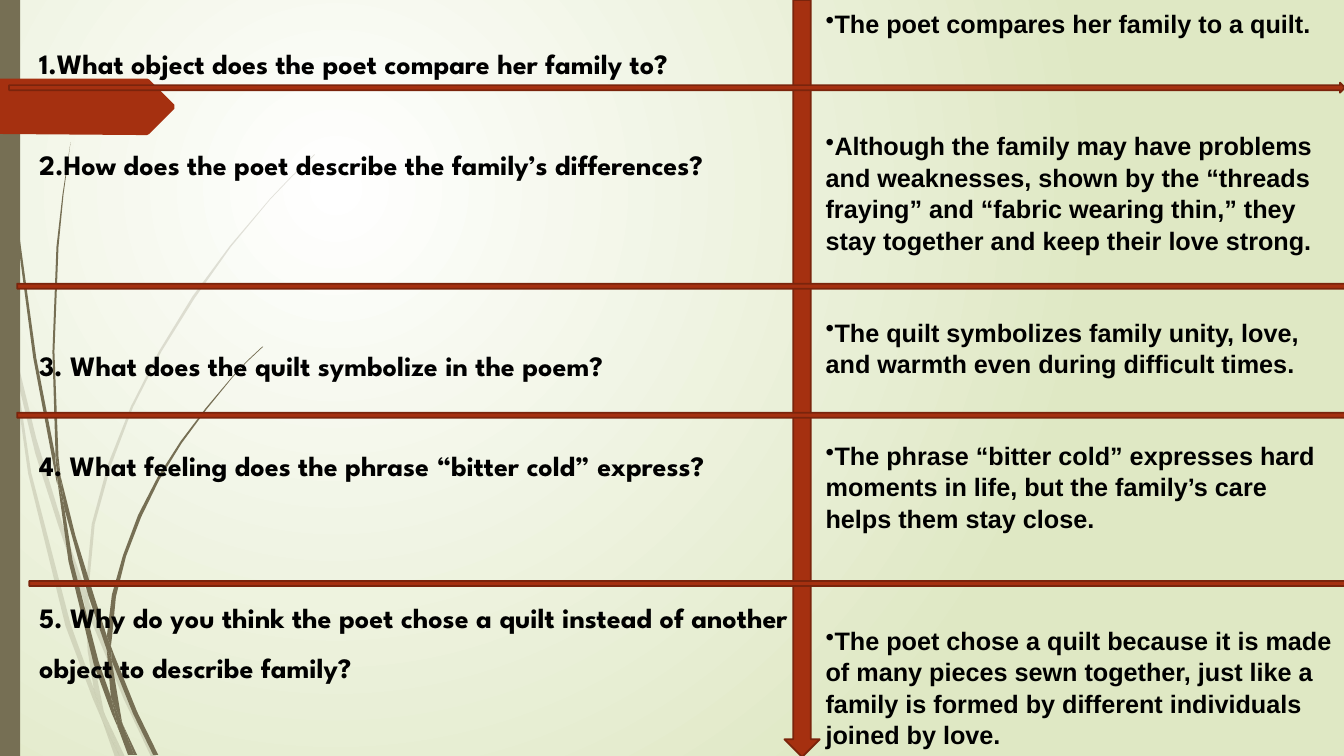
"""Builds a question-and-answer slide about a poem that compares a family to a quilt."""
from pptx import Presentation
from pptx.dml.color import RGBColor
from pptx.enum.shapes import MSO_SHAPE as Shape
from pptx.enum.text import MSO_ANCHOR as Anchor
from pptx.oxml import parse_xml
from pptx.oxml.ns import nsdecls, qn
from pptx.util import Pt

PX = 9144
W, H = 1333, 750

THEME = {
    "rust": "A53010", "rust_line": "7A240C", "olive": "766F54", "ink": "000000",
    "glow": "FFFFFF", "sage": "DFE8C4",
    "question": {"font": "League Spartan", "size": 20},
    "answer": {"font": "Arial", "size": 18, "spacing": 1.04},
    "answer_gap": 21.6,
}
NUMBER = '<a:buAutoNum %s type="arabicPeriod"/>' % nsdecls("a")
DOT = '<a:buChar %s char="•"/>' % nsdecls("a")

QUESTIONS = [
    {"text": "What object does the poet compare her family to?", "bullet": NUMBER, "spacing": 3},
    {"text": "How does the poet describe the family’s differences?", "bullet": NUMBER, "spacing": 3},
    {"text": "3. What does the quilt symbolize in the poem?", "spacing": 3, "before": 71},
    {"text": "4. What feeling does the phrase “bitter cold” express?", "spacing": 3},
    {"text": "5. Why do you think the poet chose a quilt instead of another object to describe family?",
     "spacing": 1.5, "before": 72},
]
ANSWERS = [
    ("The poet compares her family to a quilt.", 0),
    ("Although the family may have problems and weaknesses, shown by the “threads fraying” "
     "and “fabric wearing thin,” they stay together and keep their love strong.", 3),
    ("The quilt symbolizes family unity, love, and warmth even during difficult times.", 2),
    ("The phrase “bitter cold” expresses hard moments in life, but the family’s care "
     "helps them stay close.", 2),
    ("The poet chose a quilt because it is made of many pieces sewn together, just like "
     "a family is formed by different individuals joined by love.", 3),
]
ROW_ARROWS = [(9, 82), (17, 279), (17, 407), (29, 574)]
FLAG = [(173, 108), (148, 133), (146, 134), (136, 134), (0, 133), (0, 78), (136, 78), (146, 78),
        (148, 79), (173, 104)]

PALE_GRASS = [
    [(11, 350), (9, 322), (0, 282), (0, 299), (10, 344)],
    [(58, 522), (84, 599), (85, 586), (62, 520), (36, 435), (14, 345), (17, 376), (35, 450)],
    [(92, 607), (88, 596), (88, 610), (123, 694), (150, 751), (155, 751), (127, 692)],
    [(119, 751), (124, 751), (105, 711)],
    [(93, 683), (70, 619), (31, 469), (17, 376), (11, 350), (28, 470), (65, 621), (92, 693),
     (101, 714), (99, 707)],
    [(84, 599), (87, 646), (93, 683), (96, 692), (105, 711), (103, 706), (91, 646), (88, 610),
     (88, 608)],
    [(88, 584), (94, 520), (110, 462), (132, 404), (160, 349), (193, 296), (229, 245), (268, 198),
     (290, 175), (312, 154), (312, 153), (289, 175), (268, 197), (228, 244), (191, 294),
     (158, 348), (130, 403), (107, 461), (91, 520), (85, 584), (85, 586), (88, 596)],
    [(101, 714), (114, 751), (119, 751)],
    [(88, 608), (88, 610), (88, 596), (85, 586), (84, 599)],
    [(96, 692), (93, 683), (99, 707), (101, 714), (119, 751), (105, 711)],
]
DARK_GRASS = [
    [(7, 110), (17, 233), (33, 355), (56, 477), (57, 481), (55, 457), (55, 453), (36, 355),
     (19, 232), (8, 109), (5, 48), (4, 0), (3, 0), (4, 48)],
    [(88, 592), (106, 645), (106, 633), (106, 631), (93, 590), (75, 532), (60, 472), (64, 505)],
    [(113, 649), (110, 641), (111, 656), (132, 708), (152, 749), (157, 749), (136, 706)],
    [(110, 691), (98, 657), (72, 556), (64, 505), (57, 477), (68, 557), (93, 659), (111, 708),
     (117, 722), (116, 717)],
    [(60, 472), (58, 453), (54, 349), (58, 245), (63, 193), (70, 141), (62, 193), (56, 245),
     (52, 349), (55, 449)],
    [(133, 749), (136, 749), (122, 719)],
    [(57, 477), (64, 505), (60, 472), (55, 449), (55, 453)],
    [(111, 633), (115, 592), (125, 552), (140, 513), (158, 476), (180, 440), (205, 406),
     (231, 374), (245, 359), (261, 344), (260, 344), (245, 358), (231, 373), (204, 405),
     (179, 438), (156, 474), (137, 511), (122, 551), (111, 590), (106, 631), (110, 641)],
    [(117, 722), (127, 749), (131, 749)],
    [(106, 645), (110, 691), (116, 706), (122, 719), (121, 716), (111, 656), (109, 651)],
    [(106, 645), (109, 651), (111, 656), (110, 641), (106, 631), (106, 633)],
    [(116, 706), (110, 691), (116, 717), (117, 722), (130, 749), (133, 749), (122, 719)],
]


def color(name):
    return RGBColor.from_string(THEME[name])


def paint(sp, fill, line=None, alpha=None):
    sp.shadow.inherit = False
    sp.fill.solid()
    sp.fill.fore_color.rgb = color(fill)
    if alpha:
        clr = sp.fill._xPr.find(qn("a:solidFill"))[0]
        clr.append(parse_xml('<a:alpha %s val="%d"/>' % (nsdecls("a"), alpha * 1000)))
    if line:
        sp.line.color.rgb = color(line)
        sp.line.width = Pt(1.25)
    else:
        sp.line.fill.background()


def add_preset(s, kind, x, y, w, h, fill, line=None):
    paint(s.shapes.add_shape(kind, x * PX, y * PX, w * PX, h * PX), fill, line)


def add_outline(s, points, fill, alpha=None):
    fb = s.shapes.build_freeform(*points[0], scale=PX)
    fb.add_line_segments(points[1:], close=True)
    paint(fb.convert_to_shape(), fill, alpha=alpha)


def add_frame(s, x, y, w, h, anchor):
    tf = s.shapes.add_textbox(x * PX, y * PX, w * PX, h * PX).text_frame
    tf.word_wrap = True
    tf.vertical_anchor = anchor
    return tf


def write(tf, text, font, size, spacing, before=0, bullet=None):
    p = tf.paragraphs[0] if not tf.text else tf.add_paragraph()
    p.line_spacing = spacing
    p.space_before = Pt(before)
    if bullet:
        p._p.get_or_add_pPr().append(parse_xml(bullet))
    r = p.add_run()
    r.text = text
    r.font.name, r.font.size, r.font.bold = font, Pt(size), True
    r.font.color.rgb = color("ink")


def set_background(s):
    s.background.fill.gradient()
    old = s.element.xpath(".//p:bgPr/a:gradFill")[0]
    stops = "".join('<a:gs pos="%d"><a:srgbClr val="%s"/></a:gs>' % (pos, THEME[name])
                    for pos, name in ((0, "glow"), (100000, "sage")))
    old.getparent().replace(old, parse_xml(
        '<a:gradFill %s rotWithShape="1"><a:gsLst>%s</a:gsLst><a:path path="circle">'
        '<a:fillToRect l="50000" t="50000" r="100000" b="100000"/></a:path></a:gradFill>'
        % (nsdecls("a"), stops)))


def main():
    prs = Presentation()
    prs.slide_width, prs.slide_height = W * PX, H * PX
    s = prs.slides.add_slide(prs.slide_layouts[6])
    set_background(s)
    for grass, alpha in ((PALE_GRASS, 20), (DARK_GRASS, None)):
        for points in grass:
            add_outline(s, points, "olive", alpha)
    add_preset(s, Shape.RECTANGLE, 0, 0, 20, H, "olive")
    add_outline(s, FLAG, "rust")
    add_preset(s, Shape.DOWN_ARROW, 778, 0, 35, 751, "rust", "rust_line")

    tf = add_frame(s, 29, -25, 784, 717, Anchor.TOP)
    for question in QUESTIONS:
        write(tf, **question, **THEME["question"])
    tf = add_frame(s, 809, 7, 525, 737, Anchor.MIDDLE)
    for text, gap_lines in ANSWERS:
        write(tf, text, before=gap_lines * THEME["answer_gap"], bullet=DOT, **THEME["answer"])

    for x, y in ROW_ARROWS:
        add_preset(s, Shape.RIGHT_ARROW, x, y, 1325, 10, "rust", "rust_line")
    prs.save("out.pptx")


if __name__ == "__main__":
    main()
